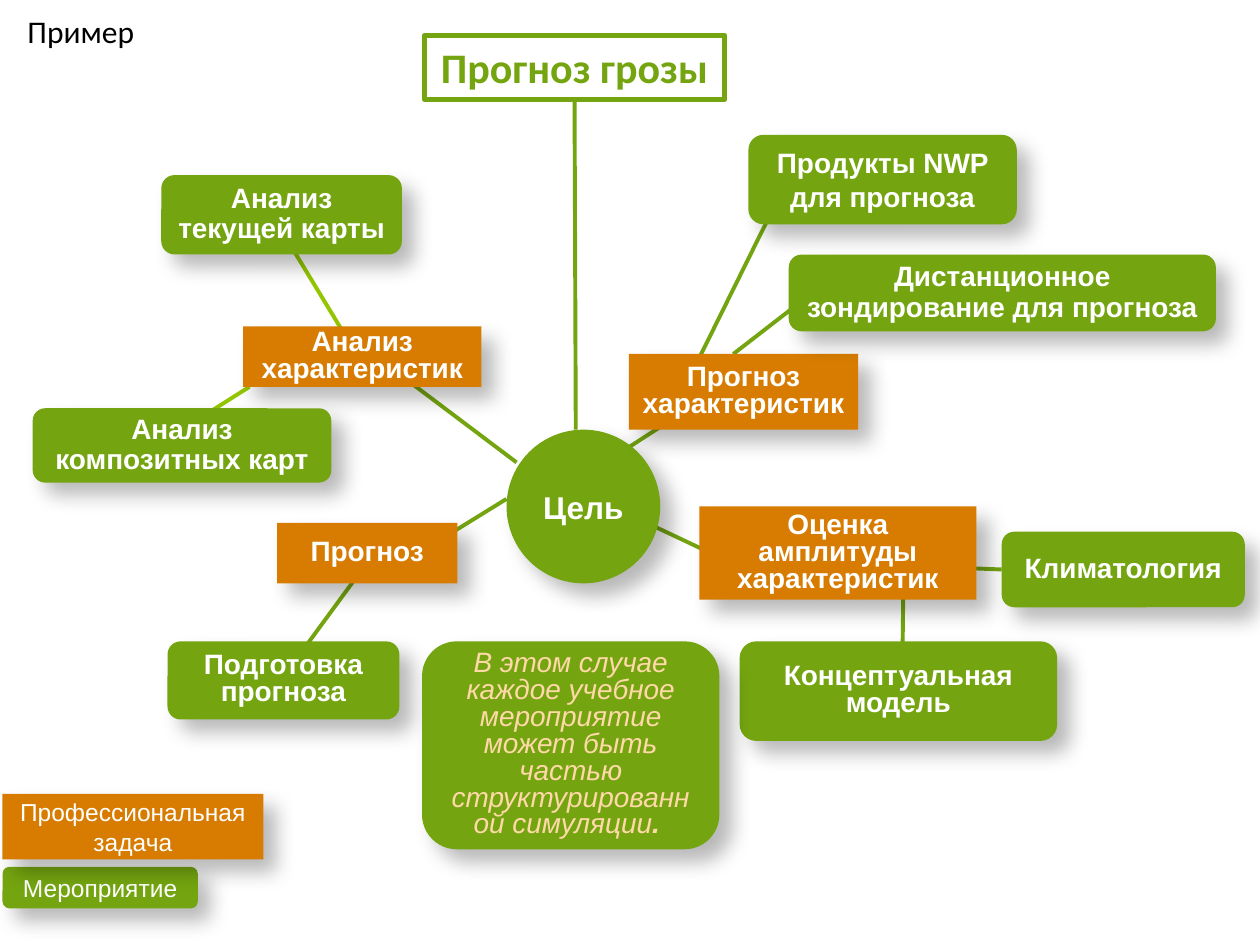
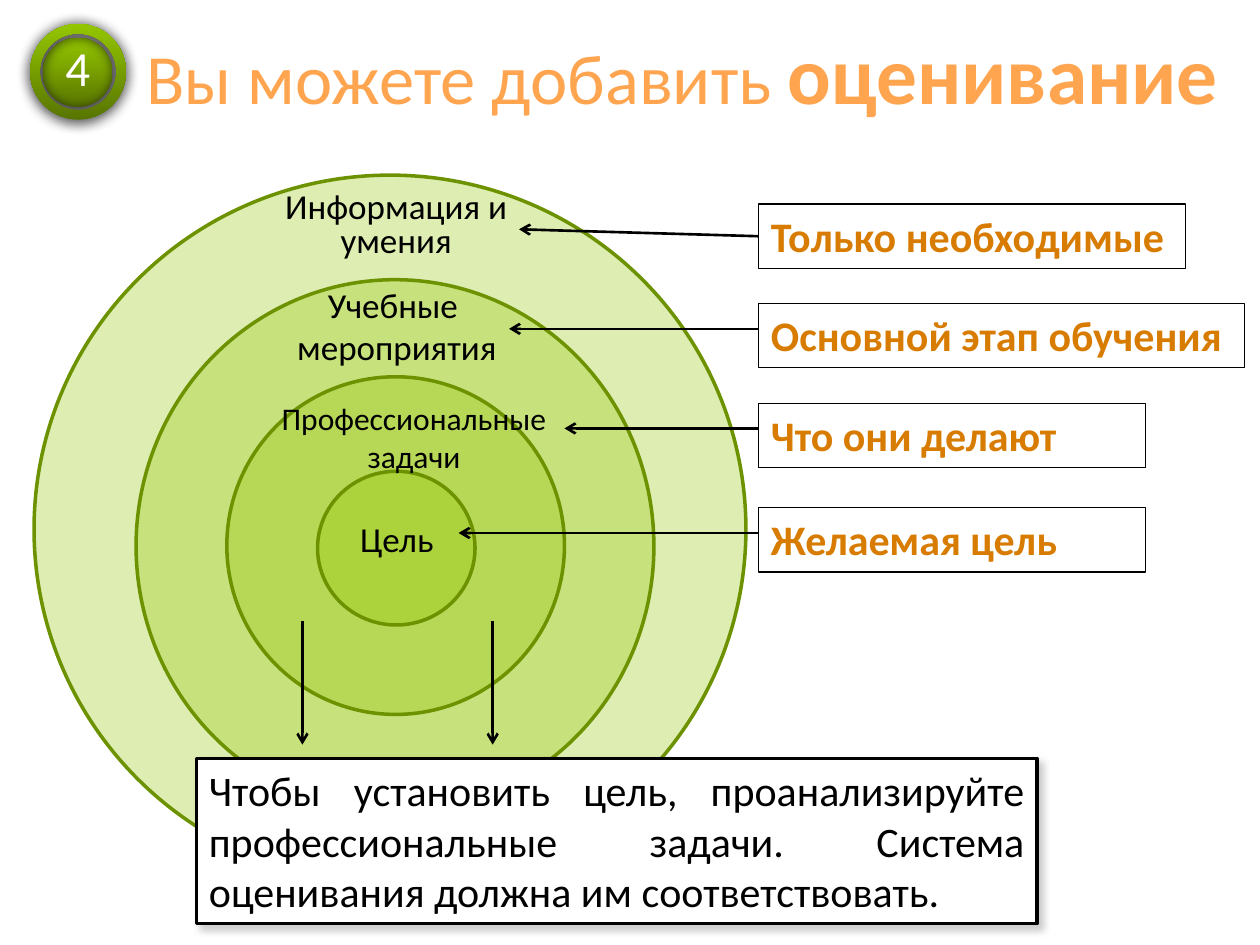
from lxml.etree import SubElement
from pptx import Presentation
from pptx.dml.color import RGBColor
from pptx.enum.shapes import MSO_CONNECTOR, MSO_SHAPE
from pptx.enum.text import MSO_ANCHOR, MSO_AUTO_SIZE, PP_ALIGN
from pptx.oxml.ns import qn
from pptx.util import Inches, Pt

COLORS = {
    "green": "74A510", "lime": "93C600", "orange": "D77C01", "peach": "FFA44F",
    "cream": "FFD9A7", "ring": "94C600", "ring line": "6D9200",
    "badge dark": "587500", "white": "FFFFFF", "black": "000000", "gray": "808080",
}
# Shadows: colour, opacity %, blur pt, distance pt, direction degrees
CARD_SHADOW = ("black", 28, 11.8, 10, 45)
BADGE_SHADOW = ("black", 100, 8.5, 1, 90)
NOTE_SHADOW = ("gray", 40, 4, 3, 45)

CARD_FONT = {"name": "Arial", "size": Pt(16), "bold": True}
LEGEND_FONT = {"name": "Arial", "size": Pt(14)}
REMARK_FONT = {"name": "Arial", "size": Pt(16), "italic": True}
GOAL_FONT = {"name": "Arial", "size": Pt(18), "bold": True}
LABEL_FONT = {"name": "Calibri", "size": Pt(20)}
SMALL_FONT = {"name": "Calibri", "size": Pt(18)}
HEAD_FONT = {"name": "Calibri", "size": Pt(24), "bold": True}
NOTE_FONT = {"name": "Calibri", "size": Pt(24)}
TITLE_FONT = {"name": "Calibri", "size": Pt(40.3)}
BADGE_FONT = {"name": "Calibri", "size": Pt(28)}


def rgb(color):
    return RGBColor.from_string(COLORS[color])


def set_values(target, values):
    for name, value in values.items():
        setattr(target, name, value)


def place(shape, frame):
    names = ("left", "top", "width", "height")
    set_values(shape, dict(zip(names, map(Inches, frame))))


def write(shape, lines, font, color, align=PP_ALIGN.CENTER, spacing=1.0,
          anchor=MSO_ANCHOR.MIDDLE):
    """Fill a shape with lines; a line is a string or a list of (text, font changes)."""
    frame = shape.text_frame
    set_values(frame, {"word_wrap": True, "auto_size": MSO_AUTO_SIZE.NONE,
                       "vertical_anchor": anchor})
    for index, line in enumerate(lines):
        para = frame.add_paragraph() if index else frame.paragraphs[0]
        set_values(para, {"alignment": align, "line_spacing": spacing})
        for text, changes in [(line, {})] if isinstance(line, str) else line:
            span = para.add_run()
            span.text = text
            set_values(span.font, {**font, **changes})
            span.font.color.rgb = rgb(color)


def paint(shape, fill=None, line=None, weight=0.0):
    if fill:
        shape.fill.solid()
        shape.fill.fore_color.rgb = rgb(fill)
    else:
        shape.fill.background()
    if line:
        shape.line.color.rgb = rgb(line)
        shape.line.width = Pt(weight)
    else:
        shape.line.fill.background()


def add_shadow(shape, shadow):
    color, opacity, blur, distance, direction = shadow
    effects = shape._element.spPr.find(qn("a:effectLst"))
    outer = SubElement(effects, qn("a:outerShdw"), blurRad=str(Pt(blur)),
                       dist=str(Pt(distance)), dir=str(direction * 60000),
                       algn="ctr", rotWithShape="0")
    tone = SubElement(outer, qn("a:srgbClr"), val=COLORS[color])
    SubElement(tone, qn("a:alpha"), val=str(opacity * 1000))


def add_box(page, kind, frame, fill=None, line=None, weight=0.0, shadow=None):
    box = page.shapes.add_shape(kind, *map(Inches, frame))
    box.shadow.inherit = False
    paint(box, fill, line, weight)
    if shadow:
        add_shadow(box, shadow)
    return box


def add_card(page, kind, frame, fill, text, spacing=1.0, font=CARD_FONT):
    card = add_box(page, kind, frame, fill, shadow=CARD_SHADOW)
    write(card, [text], font, "white", spacing=spacing)
    return card


def add_task(page, frame, text, spacing=0.8, font=CARD_FONT):
    return add_card(page, MSO_SHAPE.RECTANGLE, frame, "orange", text, spacing, font)


def add_activity(page, frame, text, spacing=0.9, font=CARD_FONT):
    return add_card(page, MSO_SHAPE.ROUNDED_RECTANGLE, frame, "green", text, spacing, font)


def add_label(page, frame, lines, font=LABEL_FONT, align=PP_ALIGN.CENTER, spacing=1.0):
    label = page.shapes.add_textbox(*map(Inches, frame))
    write(label, lines, font, "black", align, spacing, MSO_ANCHOR.TOP)


def add_link(page, ends, color="green", weight=2.25, arrow=False):
    link = page.shapes.add_connector(MSO_CONNECTOR.STRAIGHT, *map(Inches, ends))
    link.line.color.rgb = rgb(color)
    link.line.width = Pt(weight)
    if arrow:
        SubElement(link.line._get_or_add_ln(), qn("a:tailEnd"), type="arrow")
    SubElement(link._element.spPr, qn("a:effectLst"))
    return link


def add_arrow(page, ends):
    return add_link(page, ends, "black", 1.5, arrow=True)


def add_ring(page, frame):
    ring = add_box(page, MSO_SHAPE.OVAL, frame, "ring", "ring line", 2)
    tone = ring._element.spPr.find(qn("a:solidFill"))[0]
    SubElement(tone, qn("a:alpha"), val="30000")


def add_badge(page, number):
    disc = add_box(page, MSO_SHAPE.OVAL, (0.34, 0.3, 0.55, 0.55), shadow=BADGE_SHADOW)
    rim = add_box(page, MSO_SHAPE.DONUT, (0.24, 0.19, 0.76, 0.76), shadow=BADGE_SHADOW)
    rim.adjustments[0] = 0.1
    for part in (disc, rim):
        part.fill.gradient()
        part.fill.gradient_angle = 90
        for stop, color in zip(part.fill.gradient_stops, ("badge dark", "ring")):
            stop.color.rgb = rgb(color)
    write(disc, [number], BADGE_FONT, "white", spacing=0.8)


def add_callout(page, top, width, text):
    box = add_box(page, MSO_SHAPE.RECTANGLE, (6.02, top, width, 0.51),
                  line="black", weight=0.75)
    write(box, [text], HEAD_FONT, "orange", PP_ALIGN.LEFT, anchor=MSO_ANCHOR.TOP)
    return box


def new_page(deck):
    return deck.slides.add_slide(deck.slide_layouts.get_by_name("Title Only"))


def build_forecast_map(deck):
    page = new_page(deck)
    title = page.shapes.title
    place(title, (3.37, 0.28, 2.38, 0.51))
    paint(title, "white", "green", 3)
    write(title, ["Прогноз грозы "], HEAD_FONT, "green", anchor=MSO_ANCHOR.TOP)

    title_link = add_link(page, (4.56, 0.79, 4.57, 3.41))
    title_link.begin_connect(title, 2)
    climate_link = add_link(page, (7.7, 4.51, 7.95, 4.52))
    for ends in [
        (3.13, 2.94, 4.1, 3.67), (2.91, 4.47, 2.36, 5.22), (3.21, 4.46, 4.02, 3.96),
        (5.7, 3.09, 4.96, 3.57), (6.44, 2.33, 5.82, 2.81), (6.08, 1.77, 5.55, 2.84),
        (7.17, 4.63, 7.16, 5.44), (5.07, 4.12, 5.79, 4.46),
    ]:
        add_link(page, ends)
    for ends in [(2.72, 2.63, 2.18, 1.74), (1.98, 3.07, 1.16, 3.59)]:
        add_link(page, ends, "lime")

    goal = add_box(page, MSO_SHAPE.OVAL, (4.02, 3.41, 1.22, 1.22), "green",
                   shadow=CARD_SHADOW)
    write(goal, ["Цель"], GOAL_FONT, "white")
    for frame, text in [
        ((1.93, 2.59, 1.89, 0.48), "Анализ характеристик"),
        ((2.2, 4.15, 1.43, 0.48), "Прогноз"),
        ((4.99, 2.81, 1.82, 0.6), "Прогноз характеристик"),
        ((5.55, 4.02, 2.2, 0.74), "Оценка амплитуды характеристик"),
    ]:
        add_task(page, frame, text)
    for frame, text, spacing in [
        ((1.28, 1.39, 1.91, 0.63), "Анализ текущей карты", 0.9),
        ((0.26, 3.24, 2.37, 0.59), "Анализ композитных карт", 0.9),
        ((1.33, 5.09, 1.84, 0.62), "Подготовка прогноза", 0.8),
        ((5.94, 1.07, 2.13, 0.71), "Продукты NWP для прогноза", 1.0),
        ((6.26, 2.02, 3.39, 0.61), "Дистанционное зондирование для прогноза", 0.9),
        ((5.87, 5.09, 2.52, 0.79), "Концептуальная модель", 0.8),
    ]:
        add_activity(page, frame, text, spacing)
    climate = add_activity(page, (7.95, 4.22, 1.93, 0.6), "Климатология")
    climate_link.end_connect(climate, 1)

    add_activity(page, (0.02, 6.88, 1.55, 0.33), "Мероприятие", 1.0, LEGEND_FONT)
    add_task(page, (0.02, 6.3, 2.07, 0.52), "Профессиональная задача", 1.0, LEGEND_FONT)
    add_label(page, (0.12, 0.05, 1.5, 0.4), ["Пример"], SMALL_FONT, PP_ALIGN.LEFT)
    remark = add_box(page, MSO_SHAPE.ROUNDED_RECTANGLE, (3.35, 5.09, 2.36, 1.65),
                     "green", shadow=CARD_SHADOW)
    remark_text = ("В этом случае каждое учебное мероприятие может быть "
                   "частью структурированной симуляции")
    write(remark, [[(remark_text, {}), (". ", {"bold": True})]], REMARK_FONT, "cream",
          spacing=0.8)


def build_assessment(deck):
    page = new_page(deck)
    title = page.shapes.title
    place(title, (1.06, 0.07, 9.06, 1))
    write(title, [[("Вы можете добавить ", {}),
                   ("оценивание", {"size": Pt(46.5), "bold": True})]],
          TITLE_FONT, "peach", PP_ALIGN.LEFT)
    add_badge(page, "4")

    for frame in [(0.27, 1.39, 5.65, 5.62), (1.08, 2.22, 4.11, 4.23),
                  (1.8, 2.99, 2.68, 2.68), (2.52, 3.74, 1.25, 1.22)]:
        add_ring(page, frame)
    add_label(page, (1.48, 1.48, 3.33, 0.65), ["Информация и", "умения"], spacing=0.8)
    add_label(page, (1.69, 2.2, 2.92, 0.77), ["Учебные ", "мероприятия"])
    add_label(page, (2.09, 3.12, 2.39, 0.71), ["Профессиональные задачи"], SMALL_FONT)
    add_label(page, (2.66, 4.06, 0.98, 0.44), ["Цель"])

    needed = add_callout(page, 1.62, 3.39, "Только необходимые")
    add_arrow(page, (6.02, 1.88, 4.12, 1.82)).begin_connect(needed, 1)
    for top, width, text, tip in [
        (2.41, 3.86, "Основной этап обучения", 4.04),
        (3.2, 3.07, "Что они делают", 4.48),
        (4.03, 3.07, "Желаемая цель", 3.64),
    ]:
        add_callout(page, top, width, text)
        add_arrow(page, (6.02, top + 0.2, tip, top + 0.2))

    note = add_box(page, MSO_SHAPE.RECTANGLE, (1.56, 6.02, 6.67, 1.31),
                   "white", "black", 2.25, NOTE_SHADOW)
    write(note, ["Чтобы установить цель, проанализируйте профессиональные задачи. "
                 "Система оценивания должна им соответствовать."],
          NOTE_FONT, "black", PP_ALIGN.JUSTIFY, anchor=MSO_ANCHOR.TOP)
    for x in (2.4, 3.91):
        add_arrow(page, (x, 4.93, x, 5.91))


def main():
    deck = Presentation()
    deck.slide_width, deck.slide_height = Inches(10), Inches(7.5)
    build_forecast_map(deck)
    build_assessment(deck)
    deck.save("out.pptx")


if __name__ == "__main__":
    main()
